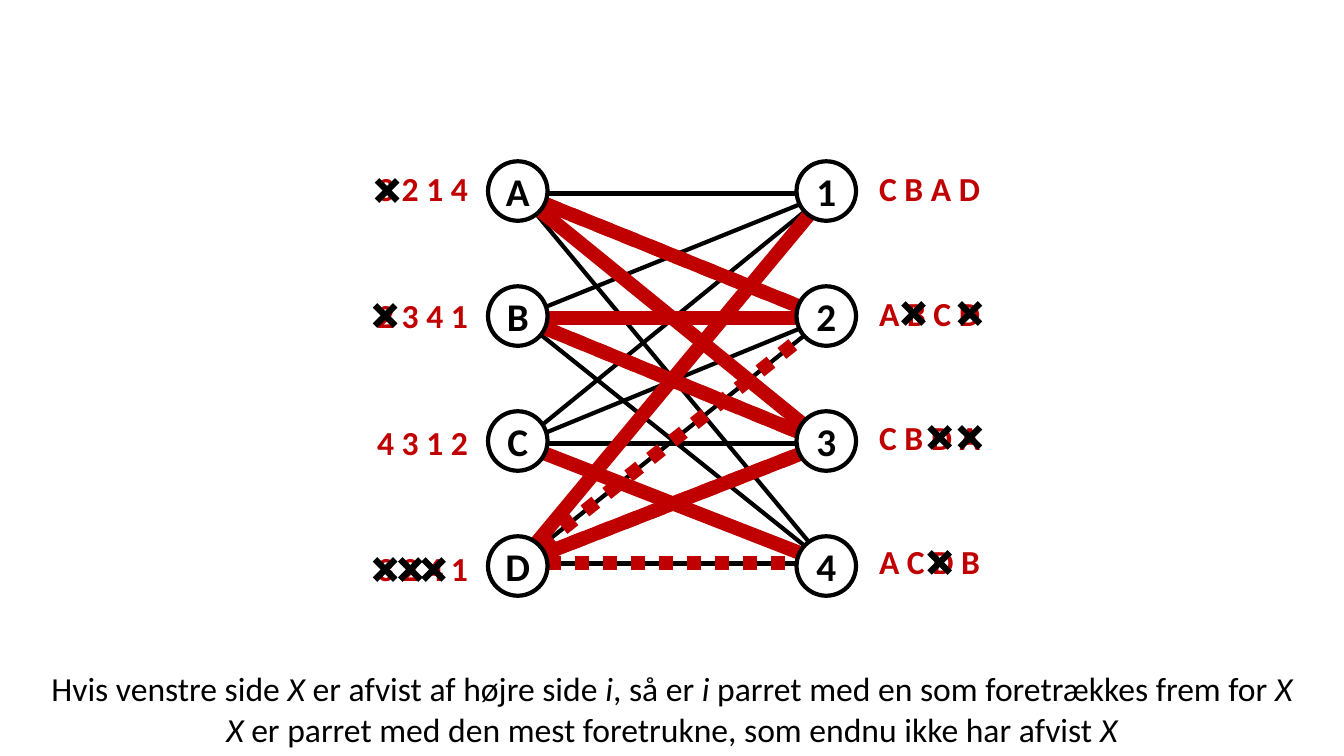
from pptx import Presentation
from pptx.dml.color import RGBColor
from pptx.enum import dml, shapes, text
from pptx.oxml.ns import qn
from pptx.util import Inches, Pt
from lxml import etree

BLACK = RGBColor(0, 0, 0)
WHITE = RGBColor(255, 255, 255)
RED = RGBColor(0xC0, 0, 0)

ROWS = (1.92, 3.15, 4.4, 5.59)
LEFT, RIGHT = 5.15, 8.2
NODE, STEP = 0.59, 1.24
CROSS = 0.2

prs = Presentation()
prs.slide_width, prs.slide_height = Inches(13.33), Inches(7.5)
slide = prs.slides.add_slide(prs.slide_layouts[6])


def draw(x1, y1, x2, y2, color, width, dotted=False):
    """Add a straight line without a shadow."""
    line = slide.shapes.add_connector(
        shapes.MSO_CONNECTOR.STRAIGHT, Inches(x1), Inches(y1), Inches(x2), Inches(y2))
    line.line.color.rgb = color
    line.line.width = Pt(width)
    if dotted:
        line.line.dash_style = dml.MSO_LINE.ROUND_DOT
    etree.SubElement(line._element.spPr, qn("a:effectLst"))


def write(par, words, size, color, bold=False, italic=False):
    """Add one run to a paragraph."""
    run = par.add_run()
    run.text = words
    font = run.font
    font.name, font.size, font.bold, font.italic = "Calibri", Pt(size), bold, italic
    font.color.rgb = color


# All possible pairs
for start in ROWS:
    for end in ROWS:
        draw(LEFT, start, RIGHT, end, BLACK, 3)

# Preference lists
sides = (
    (3.15, 1.62, 1.257, text.PP_ALIGN.RIGHT, ("3 2 1 4", "2 3 4 1", "4 3 1 2", "3 2 4 1")),
    (8.62, 1.62, 1.233, text.PP_ALIGN.LEFT, ("C B A D", "A B C D", "C B D A", "A C D B")),
)
for x, top, gap, align, prefs in sides:
    for i, pref in enumerate(prefs):
        box = slide.shapes.add_textbox(
            Inches(x), Inches(top + gap * i), Inches(1.59), Inches(0.5))
        frame = box.text_frame
        frame.word_wrap = True
        frame.auto_size = text.MSO_AUTO_SIZE.SHAPE_TO_FIT_TEXT
        frame.paragraphs[0].alignment = align
        write(frame.paragraphs[0], pref, 24, RED, bold=True)

# Proposals in order, dotted once rejected
proposals = (
    ("A3", False), ("B2", False), ("C4", False), ("D3", True), ("D3", False),
    ("A2", True), ("B3", True), ("B3", False), ("A2", False),
    ("D2", True), ("D4", True), ("D1", False),
)
for (name, digit), dotted in proposals:
    draw(LEFT, ROWS["ABCD".index(name)], RIGHT, ROWS["1234".index(digit)], RED, 10, dotted)

# Nodes
for x, names in ((4.84, "ABCD"), (7.9, "1234")):
    for i, name in enumerate(names):
        node = slide.shapes.add_shape(
            shapes.MSO_SHAPE.OVAL, Inches(x), Inches(1.6 + STEP * i), Inches(NODE), Inches(NODE))
        node.shadow.inherit = False
        node.fill.solid()
        node.fill.fore_color.rgb = WHITE
        node.line.color.rgb = BLACK
        node.line.width = Pt(3)
        frame = node.text_frame
        frame.word_wrap = False
        frame.vertical_anchor = text.MSO_ANCHOR.MIDDLE
        frame.paragraphs[0].alignment = text.PP_ALIGN.CENTER
        write(frame.paragraphs[0], name, 28, BLACK, bold=True)

# Crossed-out choices
crosses = (
    (3.74, 1.79), (3.72, 3.03), (3.72, 5.55), (3.97, 5.55), (4.2, 5.55),
    (8.96, 3.01), (9.52, 3.01), (9.22, 4.24), (9.52, 4.24), (9.22, 5.48),
)
for x, y in crosses:
    draw(x, y, x + CROSS, y + CROSS, BLACK, 4.5)
    draw(x, y + CROSS, x + CROSS, y, BLACK, 4.5)

# Caption, every second run in italics
caption = (
    ("Hvis venstre side ", "X", " er afvist af højre side ", "i", ", så er ", "i",
     " parret med en som foretrækkes frem for ", "X"),
    ("", "X", " er parret med den mest foretrukne, som endnu ikke har afvist ", "X"),
)
box = slide.shapes.add_textbox(0, Inches(6.58), Inches(13.33), Inches(0.91))
frame = box.text_frame
frame.word_wrap = True
frame.auto_size = text.MSO_AUTO_SIZE.SHAPE_TO_FIT_TEXT
for i, parts in enumerate(caption):
    par = frame.add_paragraph() if i else frame.paragraphs[0]
    par.alignment = text.PP_ALIGN.CENTER
    for j, part in enumerate(parts):
        if part:
            write(par, part, 24, BLACK, italic=j % 2 == 1)

prs.save("out.pptx")
